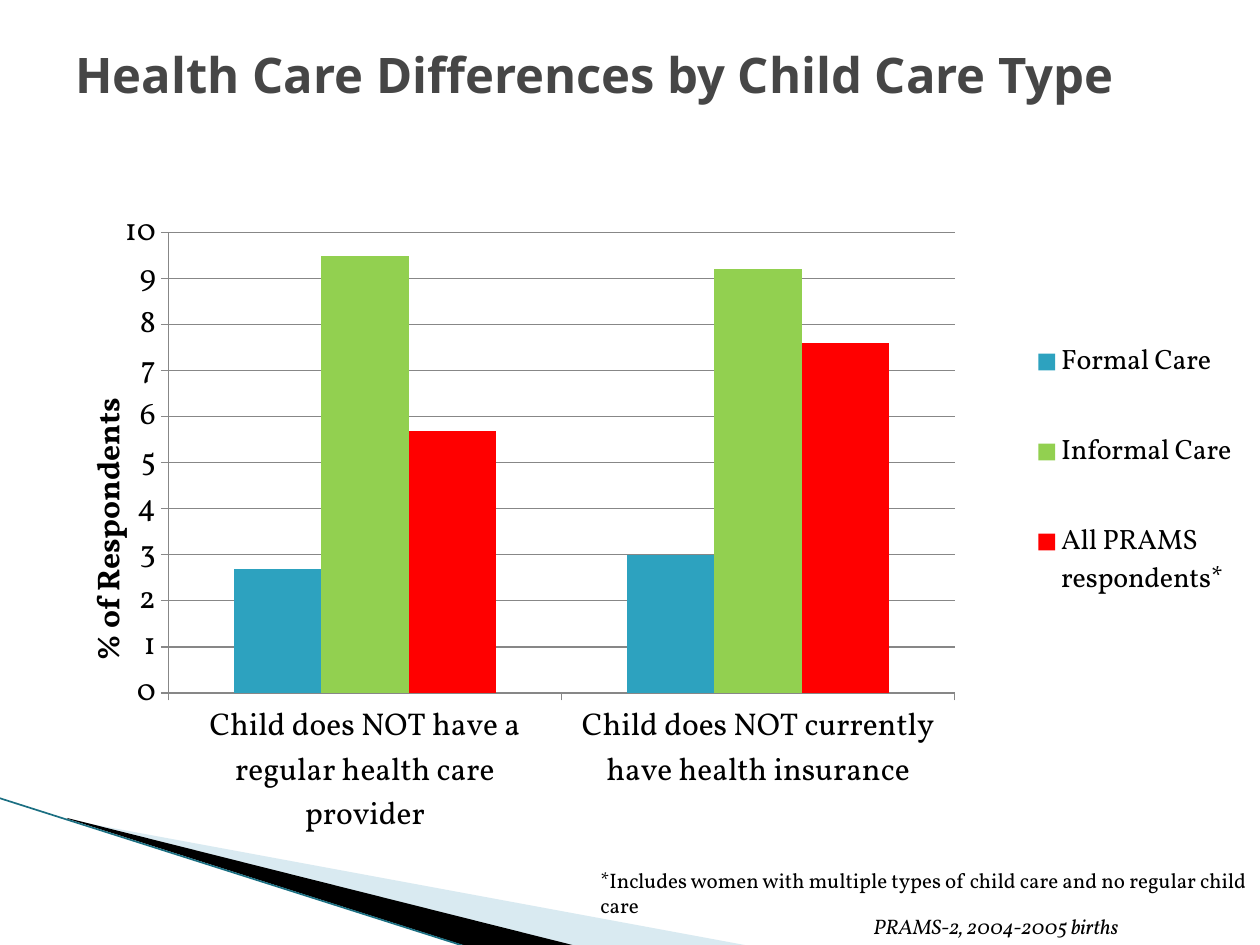
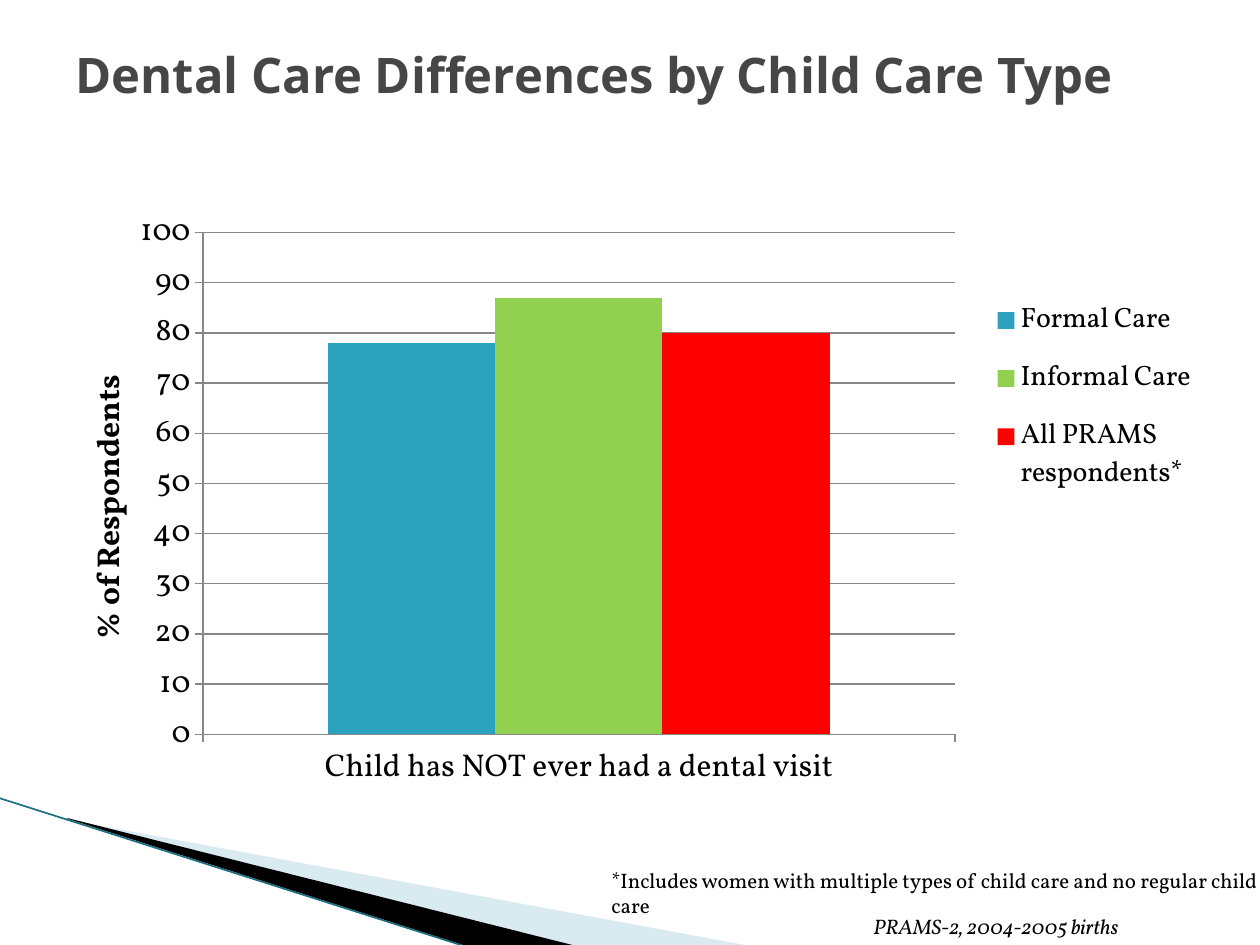
from dataclasses import dataclass

import pptx
import pptx.chart.data
import pptx.dml.color
import pptx.enum.chart
import pptx.enum.shapes
import pptx.enum.text
import pptx.oxml
import pptx.oxml.ns
import pptx.util

RGBColor = pptx.dml.color.RGBColor
qn = pptx.oxml.ns.qn

BLACK = RGBColor(0x00, 0x00, 0x00)
TITLE_GREY = RGBColor(0x46, 0x46, 0x46)
AXIS_GREY = RGBColor(0x87, 0x87, 0x87)
PALE_BLUE = RGBColor(0xA0, 0xCB, 0xDC)
EDGE_TEAL = RGBColor(0x1B, 0x6F, 0x82)
BLUE = RGBColor(0x2D, 0xA2, 0xBF)
GREEN = RGBColor(0x92, 0xD0, 0x50)
RED = RGBColor(0xFF, 0x00, 0x00)

EMU_PER_PX = 914400 / 126
SLIDE_W, SLIDE_H = 1260, 945

TITLE_FONT = {"name": "Open Sans", "size": pptx.util.Pt(28), "bold": True}
CHART_FONT = {"name": "Vollkorn", "size": pptx.util.Pt(18), "bold": False}
AXIS_TITLE_FONT = {**CHART_FONT, "bold": True}
LEGEND_FONT = {**CHART_FONT, "size": pptx.util.Pt(16)}
NOTE_FONT = {"name": "Vollkorn", "size": pptx.util.Pt(12)}
SOURCE_FONT = {**NOTE_FONT, "italic": True}

FOOTNOTE = "*Includes women with multiple types of child care and no regular child care"
SOURCE = "PRAMS-2, 2004-2005 births"


@dataclass(frozen=True)
class Box:
    x: int
    y: int
    w: int
    h: int

    def emu(self) -> dict[str, int]:
        return dict(left=px(self.x), top=px(self.y), width=px(self.w), height=px(self.h))


@dataclass(frozen=True)
class Series:
    name: str
    color: RGBColor


@dataclass(frozen=True)
class Band:
    points: list[tuple[int, int]]
    color: RGBColor
    opacity: int


@dataclass(frozen=True)
class ChartSlide:
    title: str
    title_box: Box
    chart_box: Box
    categories: list[str]
    values: list[list[float]]
    maximum: int
    step: int
    plot: tuple[float, ...]
    axis_title: tuple[float, ...]
    legend: tuple[float, ...]
    note_x: int


CARE_TYPES = [
    Series("Formal Care", BLUE),
    Series("Informal Care", GREEN),
    Series("All PRAMS respondents*", RED),
]

BANDS = [
    Band([(69, 820), (750, 946), (575, 946), (69, 819)], PALE_BLUE, 40),
    Band([(67, 818), (576, 946), (469, 947), (68, 819)], BLACK, 100),
]

SLIDES = [
    ChartSlide(
        title="Health Care Differences by Child Care Type",
        title_box=Box(63, 38, 1166, 141),
        chart_box=Box(63, 204, 1197, 636),
        categories=[
            "Child does NOT have a regular health care provider",
            "Child does NOT currently have health insurance",
        ],
        values=[[2.7, 3], [9.5, 9.2], [5.7, 7.6]],
        maximum=10,
        step=1,
        plot=(0.088, 0.045, 0.657, 0.724),
        axis_title=(0.014, 0.296),
        legend=(0.803, 0.137, 0.185, 0.566),
        note_x=588,
    ),
    ChartSlide(
        title="Dental Care Differences by Child Care Type",
        title_box=Box(63, 38, 1166, 120),
        chart_box=Box(63, 204, 1166, 636),
        categories=["Child has NOT ever had a dental visit"],
        values=[[78], [87], [80]],
        maximum=100,
        step=10,
        plot=(0.12, 0.045, 0.645, 0.789),
        axis_title=(0.014, 0.26),
        legend=(0.792, 0.122, 0.185, 0.365),
        note_x=599,
    ),
]


def px(length: int) -> int:
    return round(length * EMU_PER_PX)


def apply(target, formats: dict) -> None:
    for key, value in formats.items():
        setattr(target, key, value)


def set_font(font, formats: dict, color: RGBColor = BLACK) -> None:
    apply(font, formats)
    font.color.rgb = color


def set_layout(parent, index: int, place: tuple[float, ...], inner: bool = False) -> None:
    for old in parent.findall(qn("c:layout")):
        parent.remove(old)
    layout = pptx.oxml.parse_xml(f"<c:layout {pptx.oxml.ns.nsdecls('c')}><c:manualLayout/></c:layout>")
    settings = [("layoutTarget", "inner")] if inner else []
    settings += [("xMode", "edge"), ("yMode", "edge"), *zip("xywh", place)]
    for tag, value in settings:
        child = layout[0].makeelement(qn(f"c:{tag}"), {"val": str(value)})
        layout[0].append(child)
    parent.insert(index, layout)


def add_bands(s) -> None:
    for band in BANDS:
        builder = s.shapes.build_freeform(*band.points[0], scale=EMU_PER_PX)
        builder.add_line_segments(band.points[1:], close=True)
        sp = builder.convert_to_shape()
        sp.shadow.inherit = False
        sp.fill.solid()
        sp.fill.fore_color.rgb = band.color
        sp.line.fill.background()
        if band.opacity < 100:
            rgb = sp.fill._xPr.find(".//" + qn("a:srgbClr"))
            rgb.append(rgb.makeelement(qn("a:alpha"), {"val": str(band.opacity * 1000)}))
    edge = s.shapes.add_connector(
        pptx.enum.shapes.MSO_CONNECTOR.STRAIGHT, px(-1), px(798), px(467), px(947)
    )
    edge.line.color.rgb = EDGE_TEAL
    edge.line.width = pptx.util.Pt(0.95)
    props = edge._element.spPr
    props.append(props.makeelement(qn("a:effectLst"), {}))


def add_title(s, text: str, box: Box) -> None:
    sp = s.shapes.title
    apply(sp, box.emu())
    tf = sp.text_frame
    tf.text = text
    apply(tf, {
        "word_wrap": True,
        "auto_size": pptx.enum.text.MSO_AUTO_SIZE.NONE,
        "vertical_anchor": pptx.enum.text.MSO_ANCHOR.TOP,
    })
    p = tf.paragraphs[0]
    p.alignment = pptx.enum.text.PP_ALIGN.LEFT
    set_font(p.runs[0].font, TITLE_FONT, TITLE_GREY)


def add_note(s, text: str, box: Box, formats: dict) -> None:
    tf = s.shapes.add_textbox(**box.emu()).text_frame
    tf.word_wrap = True
    r = tf.paragraphs[0].add_run()
    r.text = text
    set_font(r.font, formats)


def add_care_chart(s, item: ChartSlide) -> None:
    data = pptx.chart.data.CategoryChartData()
    data.categories = item.categories
    for series, values in zip(CARE_TYPES, item.values):
        data.add_series(series.name, values)
    box = item.chart_box.emu()
    chart = s.shapes.add_chart(
        pptx.enum.chart.XL_CHART_TYPE.COLUMN_CLUSTERED,
        box["left"], box["top"], box["width"], box["height"], data,
    ).chart
    set_font(chart.font, CHART_FONT)
    chart.has_title = False
    space = chart._chartSpace
    space.find(qn("c:chart")).addnext(pptx.oxml.parse_xml(
        f"<c:spPr {pptx.oxml.ns.nsdecls('c', 'a')}><a:noFill/><a:ln><a:noFill/></a:ln></c:spPr>"
    ))

    plot = chart.plots[0]
    apply(plot, {"gap_width": 150, "overlap": 0, "vary_by_categories": False})
    for series, drawn in zip(CARE_TYPES, plot.series):
        drawn.format.fill.solid()
        drawn.format.fill.fore_color.rgb = series.color
        drawn.invert_if_negative = False
    set_layout(space.find(".//" + qn("c:plotArea")), 0, item.plot, inner=True)

    value_axis = chart.value_axis
    apply(value_axis, {
        "minimum_scale": 0,
        "maximum_scale": item.maximum,
        "major_unit": item.step,
        "has_major_gridlines": True,
    })
    for axis in (chart.category_axis, value_axis):
        axis.major_tick_mark = pptx.enum.chart.XL_TICK_MARK.OUTSIDE
        set_font(axis.tick_labels.font, CHART_FONT)
    for part in (chart.category_axis, value_axis, value_axis.major_gridlines):
        part.format.line.color.rgb = AXIS_GREY
        part.format.line.width = pptx.util.Pt(0.75)

    title = value_axis.axis_title
    r = title.text_frame.paragraphs[0].add_run()
    r.text = "% of Respondents"
    set_font(r.font, AXIS_TITLE_FONT)
    body = title.text_frame._txBody.find(qn("a:bodyPr"))
    body.set("rot", "-5400000")
    body.set("vert", "horz")
    set_layout(title._element, 1, item.axis_title)

    chart.has_legend = True
    chart.legend.position = pptx.enum.chart.XL_LEGEND_POSITION.RIGHT
    chart.legend.include_in_layout = False
    set_font(chart.legend.font, LEGEND_FONT)
    set_layout(chart.legend._element, 1, item.legend)


def main() -> None:
    prs = pptx.Presentation()
    apply(prs, {"slide_width": px(SLIDE_W), "slide_height": px(SLIDE_H)})
    for item in SLIDES:
        s = prs.slides.add_slide(prs.slide_layouts[5])
        add_bands(s)
        add_title(s, item.title, item.title_box)
        add_care_chart(s, item)
        add_note(s, SOURCE, Box(861, 907, 399, 38), SOURCE_FONT)
        add_note(s, FOOTNOTE, Box(item.note_x, 861, 683, 63), NOTE_FONT)
    prs.save("out.pptx")


if __name__ == "__main__":
    main()
